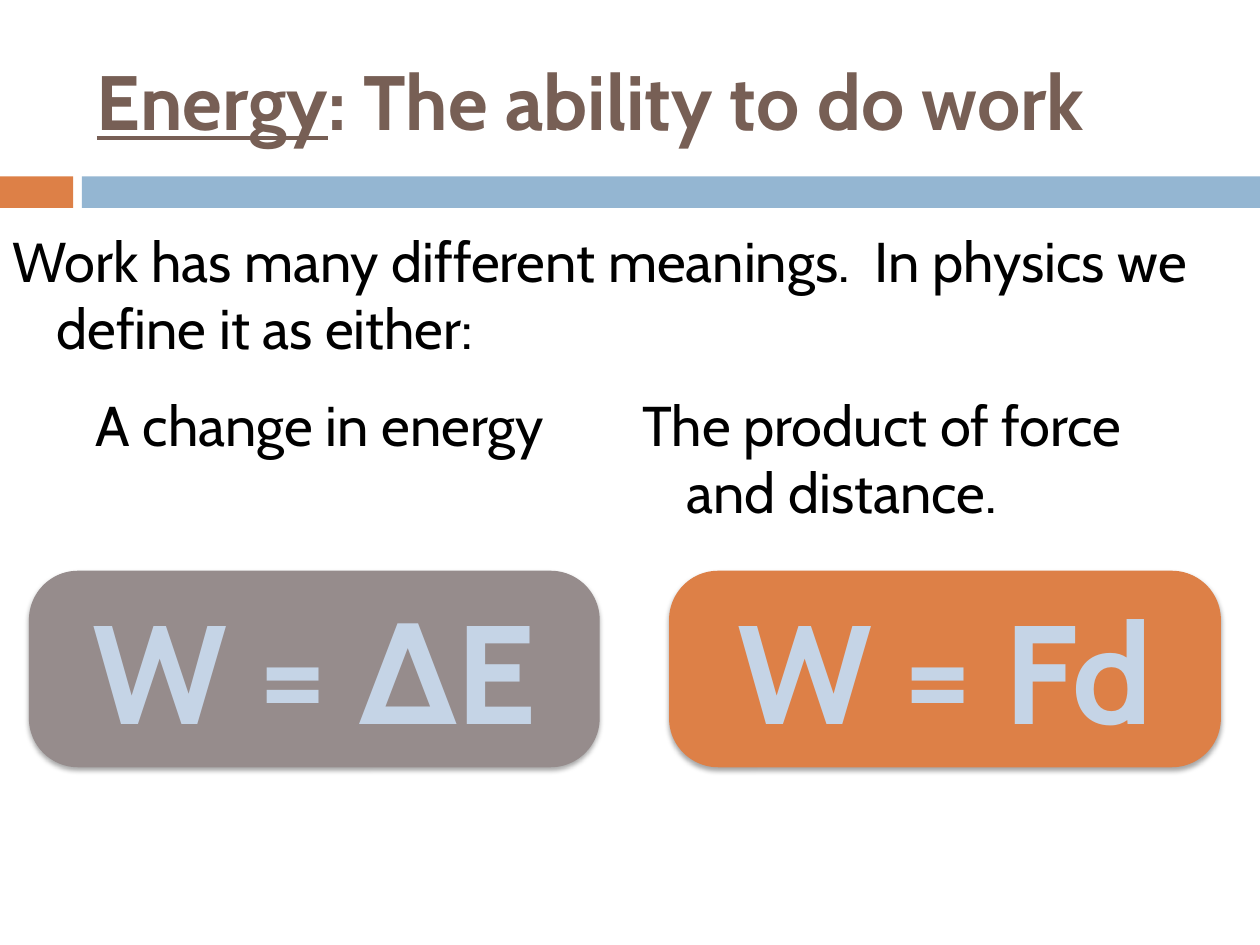
from lxml.etree import SubElement
from pptx import Presentation
from pptx.dml.color import RGBColor
from pptx.enum.shapes import MSO_SHAPE
from pptx.enum.text import MSO_ANCHOR, PP_ALIGN
from pptx.oxml.ns import qn
from pptx.util import Pt

COLORS = {"orange": "DD8047", "blue": "94B6D2", "gray": "968C8C",
          "brown": "775F55", "black": "000000", "pale": "C5D4E6"}
FONT = "Cabin"
LEFT, CENTER = PP_ALIGN.LEFT, PP_ALIGN.CENTER

# Content: places are left, top, width, height in points
TITLE = [("Energy", True), (": The ability to do work", False)]
TITLE_PLACE = (48.24, 18, 642.24, 77.76)
BARS = [("orange", (0, 100.8, 41.76, 18)), ("blue", (46.8, 100.8, 673.2, 18))]
BODY = [
    ("Work has many different meanings.  In physics we define it as either:",
     LEFT, (0, 126, 720, 93.6)),
    ("A change in energy", CENTER, (11.52, 219.6, 342.72, 289.44)),
    ("The product of force and distance.", LEFT, (360, 219.6, 342.72, 289.44)),
]
FORMULAS = [("W = ∆E", "gray", (16.56, 326.16, 326.16, 112.32)),
            ("W = Fd", "orange", (382.32, 326.16, 315.36, 112.32))]

TITLE_FORMAT = {"size": Pt(44), "bold": True}
BODY_FORMAT = {"size": Pt(32)}
FORMULA_FORMAT = {"size": Pt(80), "bold": True}
HANGING = Pt(25.2)


def points(place):
    return [Pt(value) for value in place]


def add_span(para, text, color, values):
    span = para.add_run()
    span.text = text
    span.font.name = FONT
    span.font.color.rgb = RGBColor.from_string(COLORS[color])
    for name, value in values.items():
        setattr(span.font, name, value)


def add_box(page, place, anchor):
    frame = page.shapes.add_textbox(*points(place)).text_frame
    frame.word_wrap = True
    frame.vertical_anchor = anchor
    return frame.paragraphs[0]


def add_block(page, kind, place, color):
    block = page.shapes.add_shape(kind, *points(place))
    block.shadow.inherit = False
    block.fill.solid()
    block.fill.fore_color.rgb = RGBColor.from_string(COLORS[color])
    block.line.fill.background()
    return block


def add_shadow(block):
    effects = block.element.spPr.find(qn("a:effectLst"))
    shadow = SubElement(effects, qn("a:outerShdw"), blurRad=str(Pt(3)),
                        dist=str(Pt(2)), dir="5400000", rotWithShape="0")
    color = SubElement(shadow, qn("a:srgbClr"), val=COLORS["black"])
    SubElement(color, qn("a:alpha"), val="35000")


deck = Presentation()
deck.slide_width, deck.slide_height = Pt(720), Pt(540)
page = deck.slides.add_slide(deck.slide_layouts[6])

# Divider bars
for color, place in BARS:
    add_block(page, MSO_SHAPE.RECTANGLE, place, color)

# Title
para = add_box(page, TITLE_PLACE, MSO_ANCHOR.MIDDLE)
for text, underline in TITLE:
    add_span(para, text, "brown", {**TITLE_FORMAT, "underline": underline})

# Definition texts with a hanging indent
for text, align, place in BODY:
    para = add_box(page, place, MSO_ANCHOR.TOP)
    para.alignment = align
    para.space_before = Pt(7)
    properties = para._p.get_or_add_pPr()
    properties.set("marL", str(HANGING))
    properties.set("indent", str(-HANGING))
    add_span(para, text, "black", BODY_FORMAT)

# Formula blocks
for text, color, place in FORMULAS:
    block = add_block(page, MSO_SHAPE.ROUNDED_RECTANGLE, place, color)
    block.adjustments[0] = 0.25
    add_shadow(block)
    block.text_frame.vertical_anchor = MSO_ANCHOR.MIDDLE
    para = block.text_frame.paragraphs[0]
    para.alignment = CENTER
    add_span(para, text, "pale", FORMULA_FORMAT)

deck.save("out.pptx")
